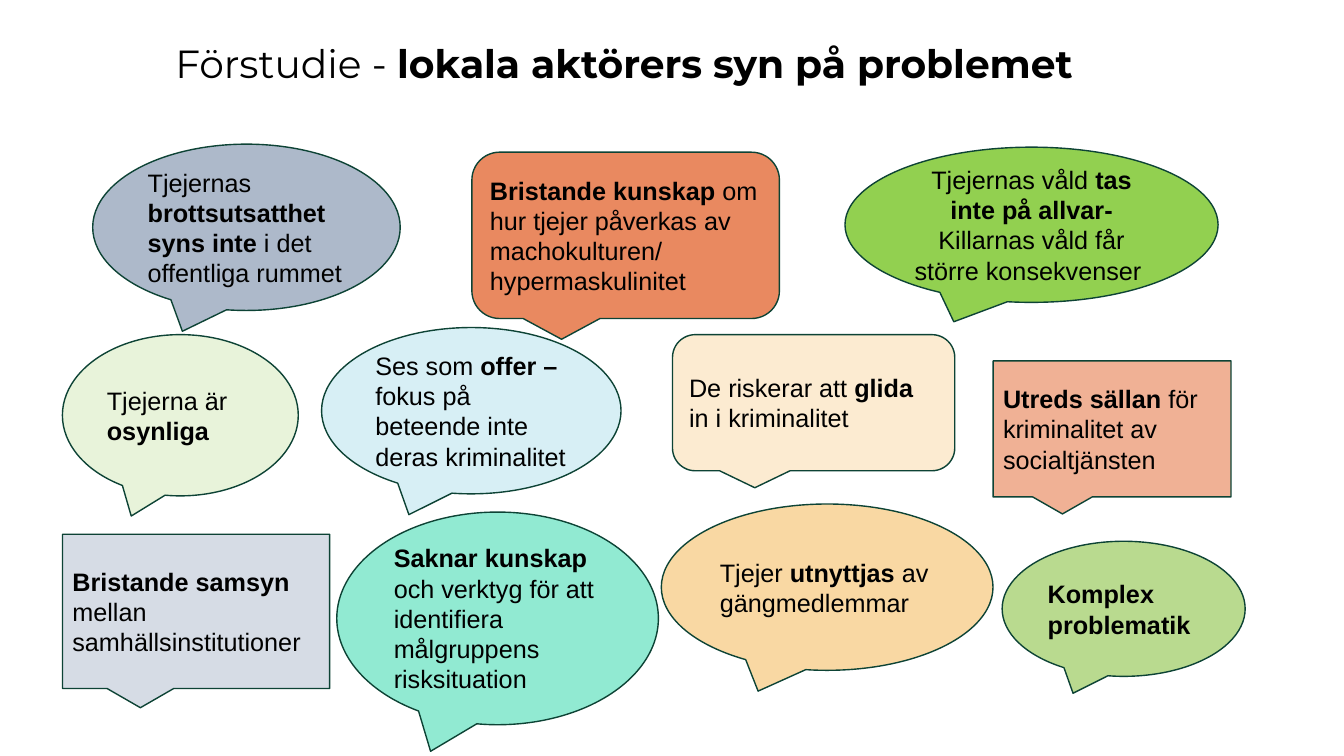
"""Build a slide of speech bubbles with local actors' views of the problem."""
from pptx import Presentation
from pptx.dml.color import RGBColor
from pptx.enum.shapes import MSO_SHAPE
from pptx.enum.text import MSO_ANCHOR, PP_ALIGN
from pptx.util import Inches, Pt

presentation = Presentation()
presentation.slide_width = Inches(13.33)
presentation.slide_height = Inches(7.5)
slide = presentation.slides.add_slide(presentation.slide_layouts[6])
COLUMN = presentation.slide_width / 100
ROW = presentation.slide_height / 100


def color(hex_string):
    """Turn a hex string into a colour."""
    return RGBColor.from_string(hex_string)


def write(shape, text, size=18, font="Arial", align=PP_ALIGN.LEFT, spacing=1.0):
    """Fill a shape with text, where asterisks switch bold on and off."""
    frame = shape.text_frame
    frame.word_wrap = True
    frame.vertical_anchor = MSO_ANCHOR.MIDDLE
    paragraph = frame.paragraphs[0]
    paragraph.alignment = align
    paragraph.line_spacing = spacing
    for part_number, part in enumerate(text.split("*")):
        for line_number, line in enumerate(part.split("\n")):
            if line_number:
                paragraph.add_line_break()
            if line:
                run = paragraph.add_run()
                run.text = line
                run.font.name = font
                run.font.size = Pt(size)
                run.font.bold = part_number % 2 == 1
                run.font.color.rgb = color("000000")


title = slide.shapes.add_textbox(
    int(12.3 * COLUMN), int(-0.93 * ROW), int(86.27 * COLUMN), int(19.33 * ROW))
write(title, "Förstudie - *lokala aktörers syn på problemet*",
      size=28, font="Montserrat", spacing=0.9)

OVAL = MSO_SHAPE.OVAL_CALLOUT
ROUNDED = MSO_SHAPE.ROUNDED_RECTANGULAR_CALLOUT
SQUARE = MSO_SHAPE.RECTANGULAR_CALLOUT
LEFT, CENTER = PP_ALIGN.LEFT, PP_ALIGN.CENTER

bubbles = [
    (OVAL, 4.65, 44.27, 17.55, 21.33, "E8F3DA", LEFT, "Tjejerna är *osynliga*"),
    (OVAL, 23.93, 43.33, 22.28, 22, "D7EFF5", LEFT,
     "Ses som *offer – *fokus på beteende inte deras kriminalitet"),
    (ROUNDED, 50.04, 44.27, 21, 18, "FCEBD1", LEFT,
     "De riskerar att *glida *in i kriminalitet"),
    (OVAL, 49.21, 66.67, 24.68, 22, "F9D8A3", LEFT,
     "Tjejer *utnyttjas* av gängmedlemmar"),
    (SQUARE, 73.89, 47.73, 17.7, 18, "F0B195", LEFT,
     "*Utreds sällan *för kriminalitet av socialtjänsten"),
    (OVAL, 74.57, 71.6, 18.08, 17.87, "B9DA8F", LEFT, "*Komplex problematik*"),
    (SQUARE, 4.65, 70.67, 19.88, 20.4, "D6DCE5", LEFT,
     "*Bristande samsyn *mellan samhällsinstitutioner"),
    (OVAL, 62.87, 19.47, 27.76, 20.53, "92D050", CENTER,
     "Tjejernas våld *tas inte på allvar- *Killarnas våld får större konsekvenser "),
    (OVAL, 6.9, 19.07, 22.88, 22, "ADB9CA", LEFT,
     "Tjejernas *brottsutsatthet syns inte *i det offentliga rummet"),
    (ROUNDED, 35.11, 20.13, 22.88, 22, "E98960", LEFT,
     "*Bristande kunskap *om hur tjejer påverkas av machokulturen/\nhypermaskulinitet"),
    (OVAL, 25.06, 67.73, 23.93, 28.13, "91EAD2", LEFT,
     "*Saknar kunskap *och verktyg för att identifiera målgruppens risksituation"),
]

for kind, left, top, width, height, fill, align, text in bubbles:
    bubble = slide.shapes.add_shape(
        kind, int(left * COLUMN), int(top * ROW), int(width * COLUMN), int(height * ROW))
    bubble.shadow.inherit = False
    bubble.fill.solid()
    bubble.fill.fore_color.rgb = color(fill)
    bubble.line.color.rgb = color("0D4335")
    bubble.line.width = Pt(1)
    write(bubble, text, align=align)

presentation.save("out.pptx")
